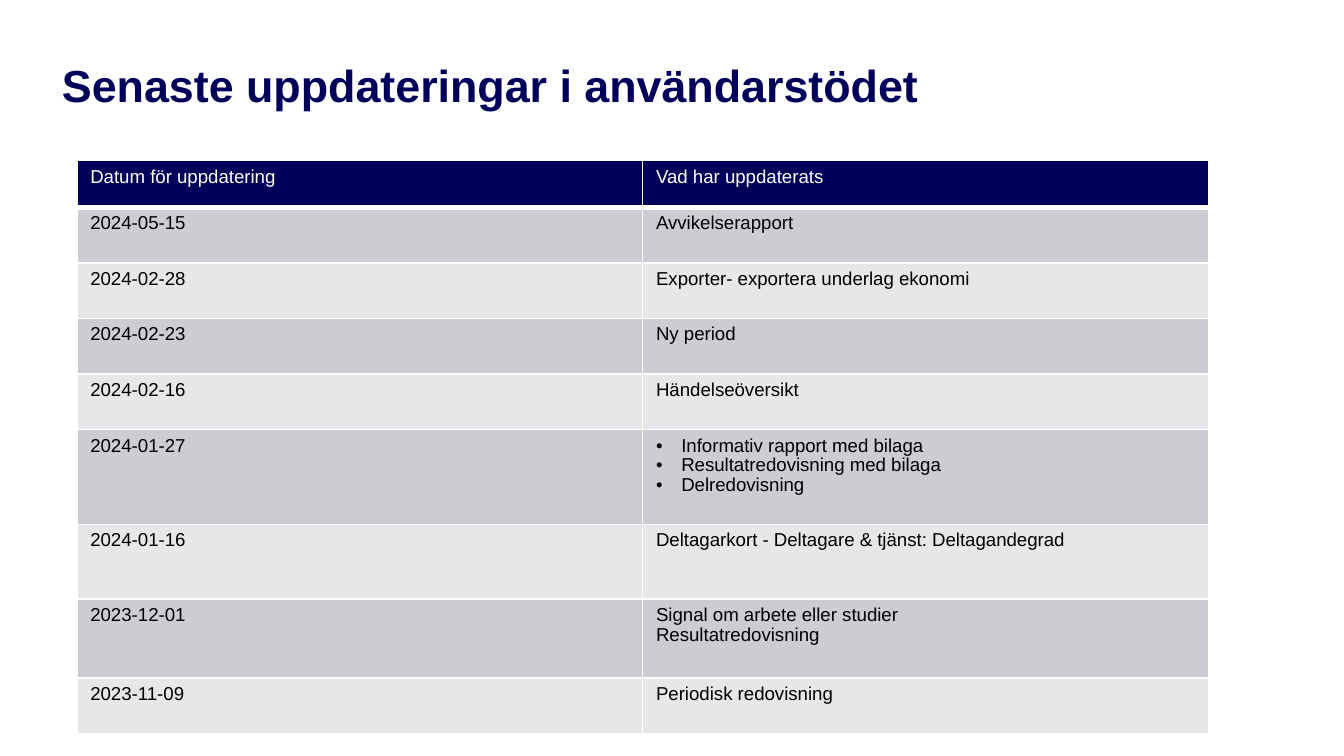
from dataclasses import dataclass

from lxml.etree import SubElement
from pptx import Presentation
from pptx.dml.color import RGBColor
from pptx.enum.text import MSO_ANCHOR, PP_ALIGN
from pptx.oxml.ns import qn
from pptx.table import _Cell
from pptx.text.text import TextFrame
from pptx.util import Pt


@dataclass(frozen=True)
class Theme:
    font: str = "Arial"
    navy: str = "00005A"
    white: str = "FFFFFF"
    black: str = "000000"
    bands: tuple[str, str] = ("CCCCD2", "E7E7EA")
    title_size: float = 24
    body_size: float = 10
    line_spacing: float = 0.95
    bullet_indent: float = 13.5


@dataclass(frozen=True)
class Update:
    date: str
    changes: tuple[str, ...]
    height: float = 29.8
    bulleted: bool = False


THEME = Theme()
HEADINGS = ("Datum för uppdatering", "Vad har uppdaterats")
HEADING_HEIGHT = 25
COLUMN_WIDTH = 303.1
UPDATES = (
    Update("2024-05-15", ("Avvikelserapport",)),
    Update("2024-02-28", ("Exporter- exportera underlag ekonomi",)),
    Update("2024-02-23", ("Ny period",)),
    Update("2024-02-16", ("Händelseöversikt",)),
    Update(
        "2024-01-27",
        ("Informativ rapport med bilaga", "Resultatredovisning med bilaga", "Delredovisning"),
        height=50.8,
        bulleted=True,
    ),
    Update("2024-01-16", ("Deltagarkort - Deltagare & tjänst: Deltagandegrad",), height=39.9),
    Update("2023-12-01", ("Signal om arbete eller studier", "Resultatredovisning"), height=42.3),
    Update("2023-11-09", ("Periodisk redovisning",)),
)


def write(frame: TextFrame, *lines: str, size: float = THEME.body_size,
          color: str = THEME.black, bold: bool = False, bulleted: bool = False) -> None:
    """Write one paragraph for each line."""
    frame.word_wrap = True
    for number, line in enumerate(lines):
        paragraph = frame.add_paragraph() if number else frame.paragraphs[0]
        if bulleted:
            properties = paragraph._p.get_or_add_pPr()
            indent = Pt(THEME.bullet_indent)
            properties.set("marL", str(indent))
            properties.set("indent", str(-indent))
            SubElement(properties, qn("a:buFont"), typeface=THEME.font)
            SubElement(properties, qn("a:buChar"), char="•")
        paragraph.alignment = PP_ALIGN.LEFT
        paragraph.line_spacing = THEME.line_spacing
        paragraph.space_before = Pt(0)
        run = paragraph.add_run()
        run.text = line
        run.font.name = THEME.font
        run.font.size = Pt(size)
        run.font.bold = bold
        run.font.color.rgb = RGBColor.from_string(color)


def style_cell(cell: _Cell, fill: str, top: float = 1, bottom: float = 1) -> None:
    """Give a cell white borders and a solid fill."""
    properties = cell._tc.get_or_add_tcPr()
    for side, width in {"L": 1, "R": 1, "T": top, "B": bottom}.items():
        border = SubElement(properties, qn(f"a:ln{side}"), w=str(Pt(width)))
        solid = SubElement(border, qn("a:solidFill"))
        SubElement(solid, qn("a:srgbClr"), val=THEME.white)
    cell.fill.solid()
    cell.fill.fore_color.rgb = RGBColor.from_string(fill)


def add_title(slide, text: str) -> None:
    title = slide.shapes.title
    title.left, title.top, title.width, title.height = Pt(33.2), Pt(33), Pt(585), Pt(53)
    frame = title.text_frame
    frame.margin_left = frame.margin_right = frame.margin_top = frame.margin_bottom = 0
    frame.vertical_anchor = MSO_ANCHOR.TOP
    write(frame, text, size=THEME.title_size, color=THEME.navy, bold=True)


def add_updates_table(slide, updates: tuple[Update, ...]) -> None:
    heights = [HEADING_HEIGHT, *(update.height for update in updates)]
    table = slide.shapes.add_table(
        len(heights), len(HEADINGS), Pt(41.2), Pt(86),
        Pt(COLUMN_WIDTH * len(HEADINGS)), Pt(sum(heights)),
    ).table
    table.first_row = table.horz_banding = False
    for column in table.columns:
        column.width = Pt(COLUMN_WIDTH)
    for row, height in zip(table.rows, heights):
        row.height = Pt(height)

    # Heading row
    for cell, heading in zip(table.rows[0].cells, HEADINGS):
        style_cell(cell, THEME.navy, bottom=3)
        write(cell.text_frame, heading, color=THEME.white)

    # One banded row for each update
    for number, update in enumerate(updates):
        date_cell, changes_cell = table.rows[number + 1].cells
        for cell in (date_cell, changes_cell):
            style_cell(cell, THEME.bands[number % 2], top=1 if number else 3)
        write(date_cell.text_frame, update.date)
        write(changes_cell.text_frame, *update.changes, bulleted=update.bulleted)


def main() -> None:
    presentation = Presentation()
    presentation.slide_width, presentation.slide_height = Pt(720), Pt(405)
    slide = presentation.slides.add_slide(presentation.slide_layouts[5])
    add_title(slide, "Senaste uppdateringar i användarstödet")
    add_updates_table(slide, UPDATES)
    presentation.save("out.pptx")


if __name__ == "__main__":
    main()
